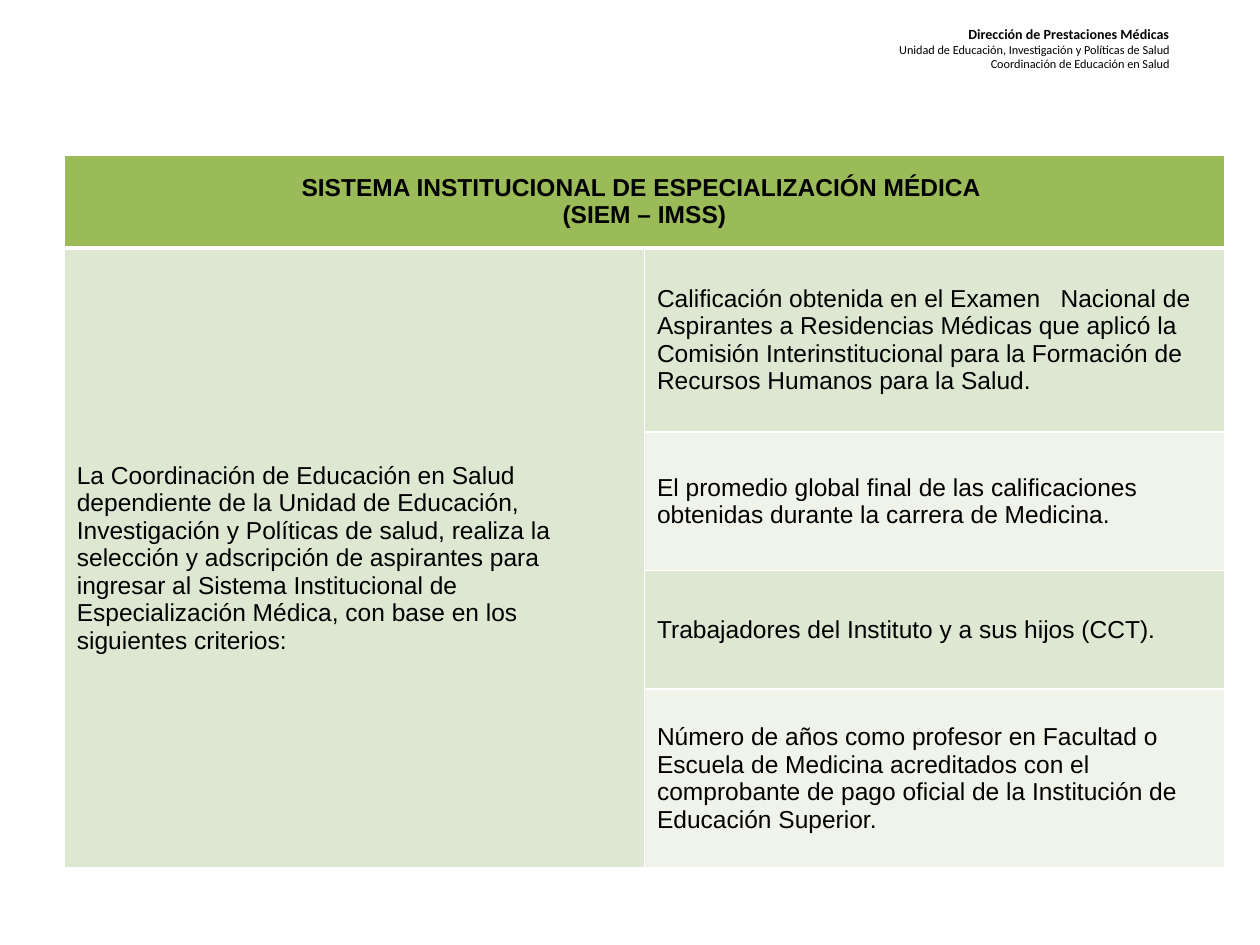
from lxml.etree import SubElement
from pptx import Presentation
from pptx.dml.color import RGBColor
from pptx.enum.text import MSO_ANCHOR, PP_ALIGN
from pptx.oxml.ns import qn
from pptx.util import Inches, Pt

BLACK = RGBColor(0x00, 0x00, 0x00)
WHITE = RGBColor(0xFF, 0xFF, 0xFF)
GREEN = RGBColor(0x9B, 0xBB, 0x59)
BAND_DARK = RGBColor(0xDE, 0xE7, 0xD1)
BAND_LIGHT = RGBColor(0xEF, 0xF3, 0xEA)

# text, size, bold
DEPARTMENT = [
    ("Dirección de Prestaciones Médicas", 8, True),
    ("Unidad de Educación, Investigación y Políticas de Salud", 7, False),
    ("Coordinación de Educación en Salud", 7, False),
]
TITLE = ["SISTEMA INSTITUCIONAL DE ESPECIALIZACIÓN MÉDICA ", "(SIEM – IMSS)"]
INTRODUCTION = (
    "La Coordinación de Educación en Salud dependiente de la Unidad de Educación, "
    "Investigación y Políticas de salud, realiza la selección y adscripción de "
    "aspirantes para ingresar al Sistema Institucional de Especialización Médica, "
    "con base en los siguientes criterios:"
)
# criterion, row height
CRITERIA = [
    ("Calificación obtenida en el Examen   Nacional de Aspirantes a Residencias "
     "Médicas que aplicó la Comisión Interinstitucional para la Formación de "
     "Recursos Humanos para la Salud.", 1.46),
    ("El promedio global final de las calificaciones obtenidas durante la carrera "
     "de Medicina.", 1.1),
    ("Trabajadores del Instituto y a sus hijos (CCT).", 0.94),
    ("Número de años como profesor en Facultad o Escuela de Medicina acreditados "
     "con el comprobante de pago oficial de la Institución de Educación Superior.", 1.42),
]
TITLE_HEIGHT = 0.74
TABLE_WIDTH = 9.21


def write(frame, lines, font_name, align):
    """Fill a text frame with one paragraph per (text, size, bold) line."""
    for index, (text, size, bold) in enumerate(lines):
        paragraph = frame.add_paragraph() if index else frame.paragraphs[0]
        paragraph.alignment = align
        run = paragraph.add_run()
        run.text = text
        run.font.name = font_name
        run.font.size = Pt(size)
        run.font.bold = bold
        run.font.color.rgb = BLACK


def style_cell(cell, fill, bottom_width=1):
    """Give a cell white borders and a solid fill."""
    properties = cell._tc.get_or_add_tcPr()
    for side, width in (("L", 1), ("R", 1), ("T", 1), ("B", bottom_width)):
        line = SubElement(properties, qn(f"a:ln{side}"), w=str(Pt(width)))
        solid = SubElement(line, qn("a:solidFill"))
        SubElement(solid, qn("a:srgbClr"), val=str(WHITE))
    cell.fill.solid()
    cell.fill.fore_color.rgb = fill
    cell.vertical_anchor = MSO_ANCHOR.MIDDLE


def add_department(slide):
    box = slide.shapes.add_textbox(Inches(6.69), Inches(0.15), Inches(2.69), Inches(0.62))
    box.text_frame.word_wrap = True
    write(box.text_frame, DEPARTMENT, "Calibri", PP_ALIGN.RIGHT)


def add_criteria_table(slide):
    heights = [TITLE_HEIGHT] + [height for _, height in CRITERIA]
    table = slide.shapes.add_table(
        len(heights), 2, Inches(0.51), Inches(1.23),
        Inches(TABLE_WIDTH), Inches(sum(heights))).table
    for row, height in zip(table.rows, heights):
        row.height = Inches(height)

    for column in range(2):
        style_cell(table.cell(0, column), GREEN, bottom_width=3)
    for row, (criterion, _) in enumerate(CRITERIA, start=1):
        style_cell(table.cell(row, 0), BAND_DARK)
        style_cell(table.cell(row, 1), BAND_DARK if row % 2 else BAND_LIGHT)
        write(table.cell(row, 1).text_frame, [(criterion, 14, False)], "Arial", PP_ALIGN.LEFT)

    title = table.cell(0, 0)
    title.merge(table.cell(0, 1))
    write(title.text_frame, [(line, 14, True) for line in TITLE], "Arial", PP_ALIGN.CENTER)
    introduction = table.cell(1, 0)
    introduction.merge(table.cell(len(CRITERIA), 0))
    write(introduction.text_frame, [(INTRODUCTION, 14, False)], "Arial", PP_ALIGN.LEFT)


def main():
    presentation = Presentation()
    presentation.slide_width = Inches(10)
    presentation.slide_height = Inches(7.5)
    slide = presentation.slides.add_slide(presentation.slide_layouts[6])
    add_department(slide)
    add_criteria_table(slide)
    presentation.save("out.pptx")


if __name__ == "__main__":
    main()
